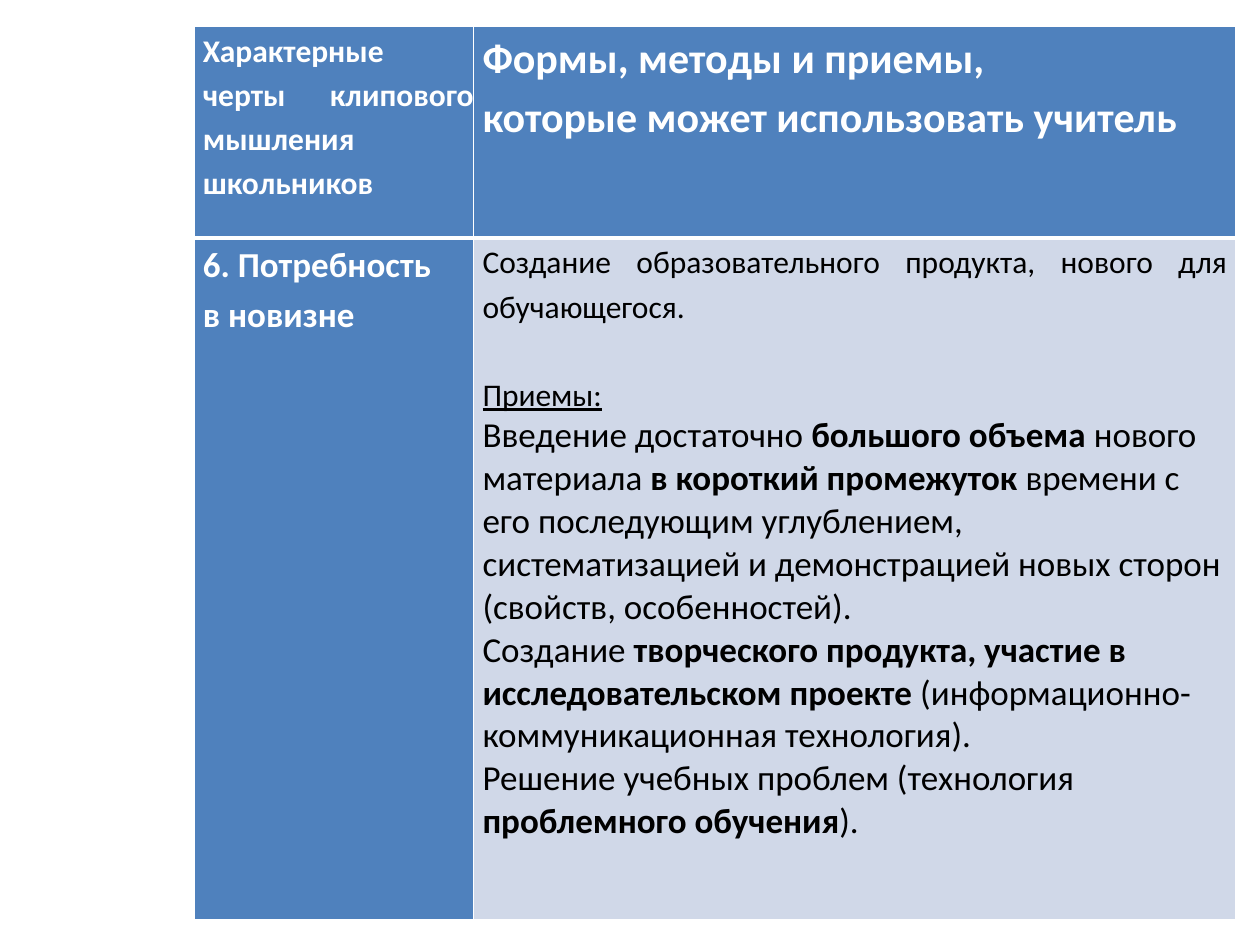
from lxml import etree
from pptx import Presentation
from pptx.dml.color import RGBColor
from pptx.enum import text
from pptx.oxml import ns
from pptx.util import Inches, Pt

BLUE, PALE, WHITE, BLACK = "4F81BD", "D0D8E8", "FFFFFF", "000000"


def rgb(color):
    return RGBColor.from_string(color)


def add_border(cell, side, width, color=WHITE):
    tcPr = cell._tc.get_or_add_tcPr()
    ln = etree.SubElement(tcPr, ns.qn(f"a:ln{side}"), w=str(Pt(width)))
    fill = etree.SubElement(ln, ns.qn("a:solidFill"))
    etree.SubElement(fill, ns.qn("a:srgbClr"), val=color)


def style_cell(cell, fill, top, bottom, right_inset):
    cell.margin_left, cell.margin_right = Inches(0.07), Inches(right_inset)
    cell.margin_top = cell.margin_bottom = 0
    for side, width in (("L", 1), ("R", 1), ("T", top), ("B", bottom)):
        add_border(cell, side, width)
    cell.fill.solid()
    cell.fill.fore_color.rgb = rgb(fill)


def add_text(tf, content, size=20, color=WHITE, bold=True, underline=False,
             justify=True, before=0):
    p = tf.paragraphs[0]
    if p.runs:
        p = tf.add_paragraph()
    p.alignment = text.PP_ALIGN.JUSTIFY if justify else text.PP_ALIGN.LEFT
    p.line_spacing = 1.15 if justify else 1.0
    if before:
        p.space_before = Pt(before)
    for i, part in enumerate(content.split("*")):
        if part:
            r = p.add_run()
            r.text = part
            r.font.name, r.font.size = "Calibri", Pt(size)
            r.font.bold = bold or i % 2 == 1
            r.font.underline = underline
            r.font.color.rgb = rgb(color)


def add_methods_table(s):
    table = s.shapes.add_table(2, 2, Inches(1.54), Inches(0.21),
                               Inches(8.27), Inches(7.09)).table
    for col, width in zip(table.columns, (2.22, 6.05)):
        col.width = Inches(width)
    for row, height in zip(table.rows, (1.68, 5.41)):
        row.height = Inches(height)
    for i, fills in enumerate(((BLUE, BLUE), (BLUE, PALE))):
        top, bottom = ((1, 3), (3, 1))[i]
        for j, fill in enumerate(fills):
            style_cell(table.cell(i, j), fill, top, bottom, (0, 0.07)[j])
    return table


def main():
    prs = Presentation()
    prs.slide_width, prs.slide_height = Inches(10), Inches(7.5)
    s = prs.slides.add_slide(prs.slide_layouts[6])
    table = add_methods_table(s)
    traits, methods, trait, advice = (c.text_frame for c in table.iter_cells())

    add_text(traits, "Характерные черты клипового мышления школьников", size=18)
    add_text(methods, "Формы, методы и приемы,", size=24)
    add_text(methods, "которые может использовать учитель", size=24)
    add_text(trait, "6. Потребность")
    add_text(trait, "в новизне")

    plain = dict(color=BLACK, bold=False)
    add_text(advice, "Создание образовательного продукта, нового для обучающегося.",
             size=18, **plain)
    add_text(advice, "Приемы:", size=18, underline=True, before=25, **plain)
    for content in (
        "Введение достаточно *большого объема *нового материала "
        "*в короткий промежуток *времени с его последующим углублением, "
        "систематизацией и демонстрацией новых сторон (свойств, особенностей).",
        "Создание *творческого продукта, участие в исследовательском проекте "
        "*(информационно-коммуникационная технология).",
        "Решение учебных проблем (технология *проблемного обучения*).",
    ):
        add_text(advice, content, justify=False, **plain)
    prs.save("out.pptx")


if __name__ == "__main__":
    main()
